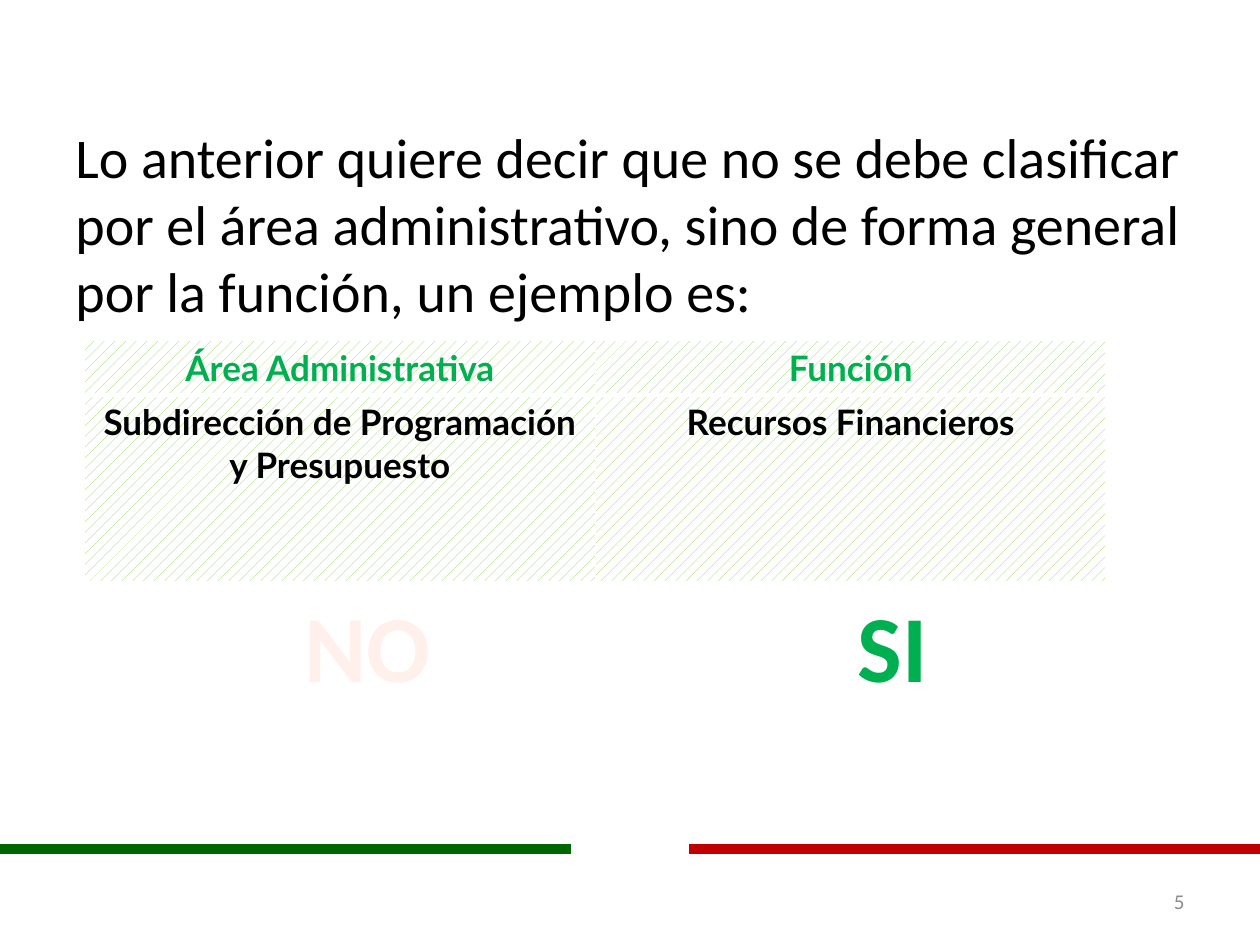
from lxml import etree
from pptx import Presentation
from pptx.dml.color import RGBColor
from pptx.enum.dml import MSO_PATTERN
from pptx.enum.shapes import MSO_CONNECTOR
from pptx.enum.text import MSO_ANCHOR, PP_ALIGN
from pptx.oxml.ns import qn
from pptx.util import Inches, Pt

LEFT, MID, RIGHT = PP_ALIGN.LEFT, PP_ALIGN.CENTER, PP_ALIGN.RIGHT
TOP, CENTER = MSO_ANCHOR.TOP, MSO_ANCHOR.MIDDLE
HATCH = MSO_PATTERN.DASHED_UPWARD_DIAGONAL
STRAIGHT = MSO_CONNECTOR.STRAIGHT

HEX = {
    "ink": "000000",
    "white": "FFFFFF",
    "green": "00B050",
    "lime": "92D050",
    "blush": "FFF0EB",
    "forest": "006600",
    "red": "C00000",
    "gray": "8C8C8C",
}
ROWS = [
    ["Área Administrativa", "Función"],
    ["Subdirección de Programación y Presupuesto", "Recursos Financieros"],
]


def paint(name):
    return RGBColor.from_string(HEX[name])


def style(para, size, color, align, bold=False, face="Calibri"):
    para.alignment = align
    for run in para.runs:
        font = run.font
        font.name, font.size, font.bold = face, Pt(size), bold
        font.color.rgb = paint(color)


def add_text(slide, box, text, size, color, align=LEFT, bold=False, anchor=TOP):
    frame = slide.shapes.add_textbox(*map(Inches, box)).text_frame
    frame.word_wrap = True
    frame.vertical_anchor = anchor
    frame.text = text
    para = frame.paragraphs[0]
    style(para, size, color, align, bold)
    return para


def add_edge(cell, side, width):
    props = cell._tc.get_or_add_tcPr()
    line = etree.Element(qn(f"a:ln{side}"), w=str(Pt(width)))
    fill = etree.SubElement(line, qn("a:solidFill"))
    etree.SubElement(fill, qn("a:srgbClr"), val=HEX["white"])
    props.insert("LRTB".index(side), line)


def add_grid(slide, box):
    x, y, w, h = box
    table = slide.shapes.add_table(2, 2, *map(Inches, box)).table
    head = 0.43
    for row, tall in zip(table.rows, (head, h - head)):
        row.height = Inches(tall)
    for col in table.columns:
        col.width = Inches(w / 2)
    for r, texts in enumerate(ROWS):
        for c, text in enumerate(texts):
            cell = table.cell(r, c)
            cell.text = text
            style(cell.text_frame.paragraphs[0], 20,
                  "ink" if r else "green", MID, True, "Lato")
            cell.fill.patterned()
            cell.fill.pattern = HATCH
            cell.fill.fore_color.rgb = paint("lime")
            cell.fill.back_color.rgb = paint("white")
            for side in "LRTB":
                inner = (r, side) in ((0, "B"), (1, "T"))
                add_edge(cell, side, 3 if inner else 1)


def add_marks(slide, box):
    x, y, w, h = box
    wide = 1.97
    add_text(slide, (x, y, wide, h), "NO", 54, "blush", MID, True)
    add_text(slide, (x + w - wide, y, wide, h), "SI", 54, "green", MID, True)


def add_foot(slide, box):
    x, y, w, h = box
    span = 4.53
    for start, color in ((x, "forest"), (x + w - span, "red")):
        line = slide.shapes.add_connector(
            STRAIGHT, Inches(start), Inches(y), Inches(start + span), Inches(y))
        line.line.color.rgb = paint(color)
        line.line.width = Pt(6)
        etree.SubElement(line._element.spPr, qn("a:effectLst"))
    add_text(slide, (x + w - 2.83, y + h - 0.4, 2.33, 0.4), "5", 12, "gray",
             RIGHT, anchor=CENTER)


def add_body(slide, box):
    para = add_text(
        slide, box,
        "Lo anterior quiere decir que no se debe clasificar por el área "
        "administrativo, sino de forma general por la función, un ejemplo es:",
        32, "ink")
    para.space_before = Pt(6.4)


def main():
    deck = Presentation()
    deck.slide_width, deck.slide_height = Inches(10), Inches(7.5)
    slide = deck.slides.add_slide(deck.slide_layouts[6])
    add_body(slide, (0.5, 0.92, 9, 5.78))
    add_grid(slide, (0.67, 2.7, 8.11, 1.91))
    add_marks(slide, (1.93, 4.62, 6.14, 1.01))
    add_foot(slide, (0, 6.74, 10, 0.61))
    deck.save("out.pptx")


if __name__ == "__main__":
    main()
